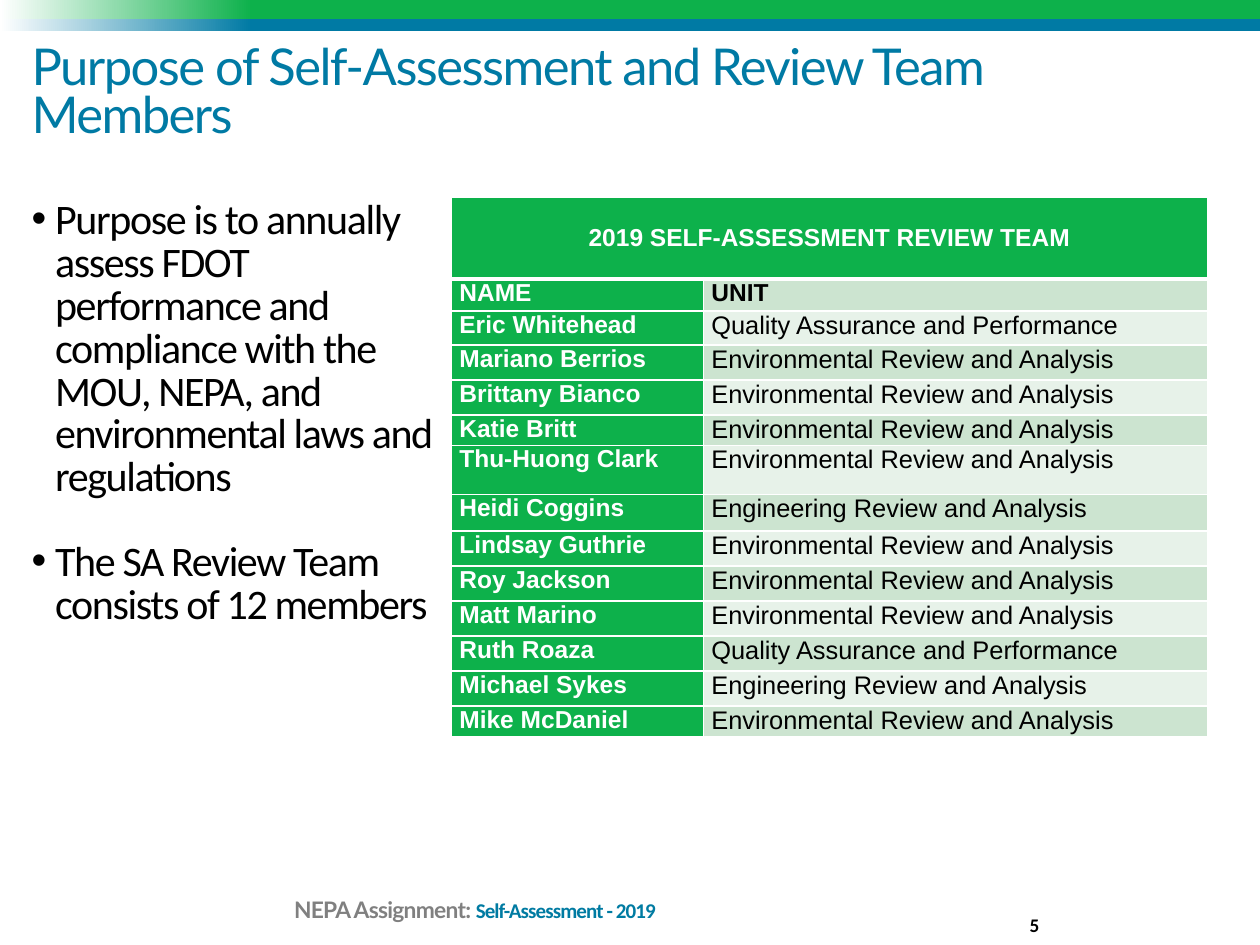
"""Build the self-assessment purpose and review team slide."""
from lxml.etree import SubElement
from pptx import Presentation
from pptx.dml.color import RGBColor
from pptx.enum.shapes import MSO_SHAPE
from pptx.enum.text import MSO_ANCHOR, PP_ALIGN
from pptx.oxml.ns import qn
from pptx.util import Pt

COLORS = {"green": "0DB14B", "blue": "007AA4", "footer_blue": "007BA2",
          "gray": "808080", "black": "000000", "white": "FFFFFF",
          "band_dark": "CCE4D0", "band_light": "E7F2E9"}
REVIEW = "Environmental Review and Analysis"
ENGINEERING = "Engineering Review and Analysis"
QUALITY = "Quality Assurance and Performance"
ROWS = [("NAME", "UNIT", 18.3), ("Eric Whitehead", QUALITY, 19.4),
        ("Mariano Berrios", REVIEW, 20), ("Brittany Bianco", REVIEW, 20),
        ("Katie Britt", REVIEW, 16.6), ("Thu-Huong Clark", REVIEW, 28),
        ("Heidi Coggins", ENGINEERING, 21), ("Lindsay Guthrie", REVIEW, 20),
        ("Roy Jackson", REVIEW, 20), ("Matt Marino", REVIEW, 20),
        ("Ruth Roaza", QUALITY, 20), ("Michael Sykes", ENGINEERING, 20),
        ("Mike McDaniel", REVIEW, 16)]
BULLETS = ["Purpose is to annually assess FDOT performance and compliance "
           "with the MOU, NEPA, and environmental laws and regulations",
           "The SA Review Team consists of 12 members"]


def style_span(span, size, font, color, bold=False, spacing=0):
    span.font.size = Pt(size)
    span.font.name = font
    span.font.bold = bold
    span.font.color.rgb = RGBColor.from_string(COLORS[color])
    if spacing:
        span.font._element.set("spc", str(round(spacing * 100)))


def add_box(left, top, width, height, anchor=MSO_ANCHOR.BOTTOM):
    box = slide.shapes.add_textbox(Pt(left), Pt(top), Pt(width), Pt(height))
    frame = box.text_frame
    frame.word_wrap = True
    frame.vertical_anchor = anchor
    frame.margin_left = frame.margin_right = 0
    frame.margin_top = frame.margin_bottom = 0
    return frame


deck = Presentation()
deck.slide_width, deck.slide_height = Pt(720), Pt(540)
slide = deck.slides.add_slide(deck.slide_layouts[6])

for top, height, color in [(0, 10.8, "green"), (10.8, 7.2, "blue")]:
    band = slide.shapes.add_shape(MSO_SHAPE.RECTANGLE, 0, Pt(top), Pt(720), Pt(height))
    band.shadow.inherit = False
    band.line.fill.background()
    band.fill.gradient()
    band.fill.gradient_angle = 0
    for stop, position, name in zip(band.fill.gradient_stops, (0, 0.2), ("white", color)):
        stop.position = position
        stop.color.rgb = RGBColor.from_string(COLORS[name])

para = add_box(168, 494, 389.5, 33.5).paragraphs[0]
para.line_spacing = 0.8
para.space_after = Pt(12)
for text, size, font, color, spacing in [
        ("NEPA Assignment: ", 13, "Lato", "gray", -0.4),
        ("Self-Assessment - 2019", 12, "Calibri", "footer_blue", -0.5)]:
    span = para.add_run()
    span.text = text
    style_span(span, size, font, color, True, spacing)

para = add_box(18, -4.3, 630, 86.4).paragraphs[0]
para.text = "Purpose of Self-Assessment and Review Team Members"
para.line_spacing = 0.8
style_span(para.runs[0], 29, "Lato", "blue", spacing=-0.9)

body = add_box(18, 114.5, 234, 360, MSO_ANCHOR.TOP)
body.text = "\n".join(BULLETS)
for para in body.paragraphs:
    para.line_spacing = 0.85
    para.space_after = Pt(24)
    properties = para._p.get_or_add_pPr()
    properties.set("marL", str(Pt(13.5)))
    properties.set("indent", str(Pt(-13.5)))
    SubElement(properties, qn("a:buFont"), typeface="Arial")
    SubElement(properties, qn("a:buChar"), char="•")
    style_span(para.runs[0], 24, "Calibri", "black", spacing=-0.8)

para = add_box(552, 506, 42, 29).paragraphs[0]
para.text = "5"
para.alignment = PP_ALIGN.RIGHT
style_span(para.runs[0], 11, "Calibri", "black", True)

heights = [47] + [row[2] for row in ROWS]
table = slide.shapes.add_table(len(heights), 2, Pt(258), Pt(112.5),
                               Pt(432), Pt(sum(heights))).table
table.columns[0].width, table.columns[1].width = Pt(144), Pt(288)
for row, height in zip(table.rows, heights):
    row.height = Pt(height)
table.cell(0, 0).merge(table.cell(0, 1))
table.cell(0, 0).text_frame.text = "2019 SELF-ASSESSMENT REVIEW TEAM"
for index, (name, unit, height) in enumerate(ROWS, 1):
    table.cell(index, 0).text_frame.text = name
    table.cell(index, 1).text_frame.text = unit

for index, row in enumerate(table.rows):
    for column, cell in enumerate(row.cells):
        cell.margin_left = cell.margin_right = Pt(4.5)
        cell.margin_top = cell.margin_bottom = 0
        for side in ("L", "R", "T", "B"):
            thick = (index, side) in [(0, "B"), (1, "T")]
            border = SubElement(cell._tc.get_or_add_tcPr(), qn(f"a:ln{side}"),
                                w=str(Pt(3 if thick else 1)))
            SubElement(SubElement(border, qn("a:solidFill")), qn("a:srgbClr"),
                       val=COLORS["white"])
        is_green = index == 0 or column == 0
        band_color = "band_dark" if index % 2 else "band_light"
        cell.fill.solid()
        cell.fill.fore_color.rgb = RGBColor.from_string(
            COLORS["green" if is_green else band_color])
        is_bold = is_green or index == 1
        for span in cell.text_frame.paragraphs[0].runs:
            style_span(span, 14 if is_bold else 14.5, "Arial",
                       "white" if is_green else "black", is_bold)
title_cell = table.cell(0, 0)
title_cell.vertical_anchor = MSO_ANCHOR.MIDDLE
title_cell.text_frame.paragraphs[0].alignment = PP_ALIGN.CENTER

deck.save("out.pptx")
